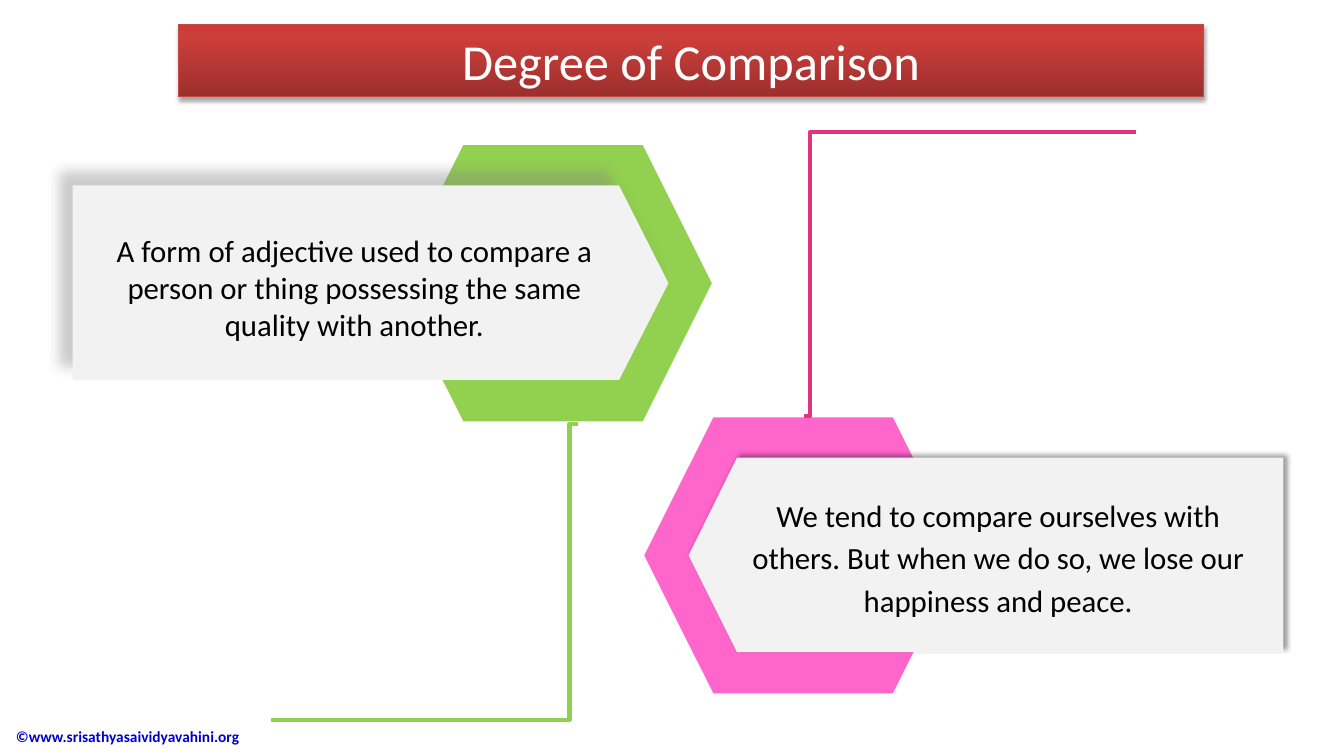
import copy

import lxml.etree
import pptx
import pptx.dml.color
import pptx.enum.shapes
import pptx.enum.text
import pptx.oxml.ns
import pptx.util

Inches = pptx.util.Inches
Pt = pptx.util.Pt
qn = pptx.oxml.ns.qn
SHAPE = pptx.enum.shapes.MSO_SHAPE
ELBOW = pptx.enum.shapes.MSO_CONNECTOR.ELBOW
MIDDLE = pptx.enum.text.MSO_ANCHOR.MIDDLE
ALIGN = pptx.enum.text.PP_ALIGN


def color(value):
    return pptx.dml.color.RGBColor.from_string(value)


def write(box, text, align, spacing, font):
    frame = box.text_frame
    frame.word_wrap = True
    frame.vertical_anchor = MIDDLE
    para = frame.paragraphs[0]
    para.alignment = align
    para.line_spacing = spacing
    span = para.add_run()
    span.text = text
    span.font.name = "Calibri"
    span.font.color.rgb = color(font["color"])
    for name, value in font.items():
        if name != "color":
            setattr(span.font, name, value)


deck = pptx.Presentation()
deck.slide_width = Inches(13.33)
deck.slide_height = Inches(7.5)
page = deck.slides.add_slide(deck.slide_layouts[5])

title = page.shapes.title
place = {"left": 1.77, "top": 0.24, "width": 10.17, "height": 0.72}
for name, value in place.items():
    setattr(title, name, Inches(value))
title.fill.gradient()
title.fill.gradient_angle = 90
stop_list = title.element.spPr.find(".//" + qn("a:gsLst"))
stop_list.append(copy.deepcopy(stop_list[-1]))
stops = [(0, "9C2F2D"), (0.8, "CB3E3A"), (1, "CE3B37")]
for stop, (position, shade) in zip(title.fill.gradient_stops, stops):
    stop.position = position
    stop.color.rgb = color(shade)
title.line.color.rgb = color("BF4C48")
title.line.width = Pt(0.75)
write(title, "Degree of Comparison", ALIGN.CENTER, 1, {"size": Pt(36), "color": "FFFFFF"})

shadowed = [(title, "000000", 35, 3.1, 1.8, 90)]
panels = [
    {
        "hexagon": (3.91, 1.44), "fill": "92D050",
        "flat": 0.72, "bend": 6.14, "tip": 6.63,
        "shadow": ("808080", 40, 9, 14, 225),
        "text_at": (0.85, 2.25, 5.33, 1.19), "spacing": 1,
        "text": "A form of adjective used to compare a person or thing possessing the same quality with another.",
    },
    {
        "hexagon": (6.39, 4.14), "fill": "FF66CC",
        "flat": 12.73, "bend": 7.31, "tip": 6.83,
        "shadow": ("000000", 40, 4, 3, 315),
        "text_at": (7.14, 4.77, 5.52, 1.47), "spacing": 1.15,
        "text": "We tend to compare ourselves with others. But when we do so, we lose our happiness and peace.",
    },
]
for panel in panels:
    group = page.shapes.add_group_shape()
    left, top = panel["hexagon"]
    hexagon = group.shapes.add_shape(
        SHAPE.HEXAGON, Inches(left), Inches(top), Inches(3.15), Inches(2.74))
    hexagon.shadow.inherit = False

    upper, center, lower = top + 0.4, top + 1.37, top + 2.33
    outline = [(panel["bend"], upper), (panel["tip"], center),
               (panel["bend"], lower), (panel["flat"], lower)]
    builder = group.shapes.build_freeform(Inches(panel["flat"]), Inches(upper))
    builder.add_line_segments([(Inches(x), Inches(y)) for x, y in outline])
    arrow = builder.convert_to_shape()
    for shape, shade in [(hexagon, panel["fill"]), (arrow, "F2F2F2")]:
        shape.fill.solid()
        shape.fill.fore_color.rgb = color(shade)
        shape.line.fill.background()
    shadowed.append((arrow, *panel["shadow"]))

    box = group.shapes.add_textbox(*[Inches(value) for value in panel["text_at"]])
    write(box, panel["text"], ALIGN.CENTER, panel["spacing"], {"size": Pt(22), "color": "000000"})

for shape, shade, alpha, blur, distance, angle in shadowed:
    shape.shadow.inherit = False
    effects = shape.element.spPr.find(qn("a:effectLst"))
    shadow = lxml.etree.SubElement(
        effects, qn("a:outerShdw"), blurRad=str(Pt(blur)), dist=str(Pt(distance)),
        dir=str(angle * 60000), algn="ctr", rotWithShape="0")
    tint = lxml.etree.SubElement(shadow, qn("a:srgbClr"), val=shade)
    lxml.etree.SubElement(tint, qn("a:alpha"), val=str(alpha * 1000))

elbows = [
    (5.73, 4.21, 2.69, 7.14, "92D050", 2700),
    (11.27, 1.31, 7.97, 4.13, "E13382", 98000),
]
for *ends, shade, bend in elbows:
    elbow = page.shapes.add_connector(ELBOW, *[Inches(value) for value in ends])
    elbow.line.color.rgb = color(shade)
    elbow.line.width = Pt(3)
    properties = elbow.element.spPr
    guides = properties.find(".//" + qn("a:avLst"))
    lxml.etree.SubElement(guides, qn("a:gd"), name="adj1", fmla=f"val {bend}")
    lxml.etree.SubElement(properties, qn("a:effectLst"))

footer = page.shapes.add_textbox(Inches(0.06), Inches(7.1), Inches(3.53), Inches(0.41))
write(footer, "©www.srisathyasaividyavahini.org", ALIGN.LEFT, 1,
      {"size": Pt(11), "bold": True, "color": "0000CC"})

deck.save("out.pptx")
